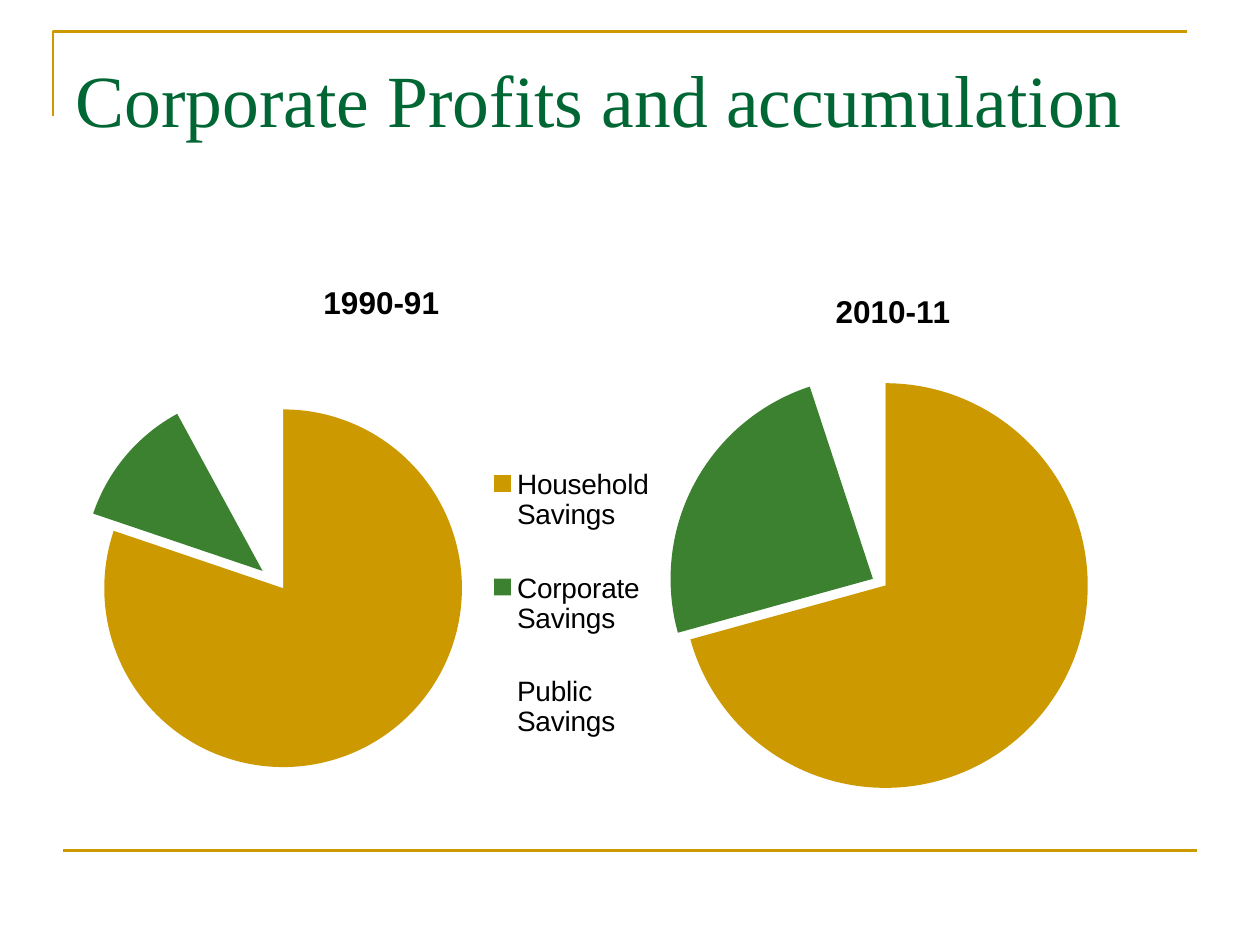
from lxml import etree
from pptx import Presentation
from pptx.chart import data
from pptx.dml import color
from pptx.enum import chart, shapes, text
from pptx.oxml import ns
from pptx.util import Inches, Pt

theme = {
    "gold": color.RGBColor.from_string("CC9900"),
    "green": color.RGBColor.from_string("3B812F"),
    "white": color.RGBColor.from_string("FFFFFF"),
    "black": color.RGBColor.from_string("000000"),
    "dark": color.RGBColor.from_string("006633"),
    "serif": "Times New Roman",
    "sans": "Arial",
    "title": Pt(42), "chart_title": Pt(18), "legend": Pt(16), "base": Pt(10),
    "rule": Pt(1.5),
}

prs = Presentation()
prs.slide_width, prs.slide_height = Inches(10), Inches(7.5)
W, H = prs.slide_width, prs.slide_height
slide = prs.slides.add_slide(prs.slide_layouts[6])


def set_format(obj, **values):
    for name, value in values.items():
        if name == "rgb":
            obj.color.rgb = value
        else:
            setattr(obj, name, value)


def set_layout(el, before, inner=False, **shares):
    for old in el.findall(ns.qn("c:layout")):
        el.remove(old)
    layout = etree.Element(ns.qn("c:layout"))
    manual = etree.SubElement(layout, ns.qn("c:manualLayout"))
    settings = [("layoutTarget", "inner")] if inner else []
    settings += [("xMode", "edge"), ("yMode", "edge"), *shares.items()]
    for tag, value in settings:
        etree.SubElement(manual, ns.qn("c:" + tag)).set("val", str(value))
    el.find(ns.qn("c:" + before)).addprevious(layout)


fb = slide.shapes.build_freeform(int(W * 0.042), int(H * 0.123))
fb.add_line_segments([(int(W * 0.042), int(H * 0.033)), (int(W * 0.942), int(H * 0.033))], close=False)
corner = fb.convert_to_shape()
corner.shadow.inherit = False
corner.fill.background()
rule = slide.shapes.add_connector(
    shapes.MSO_CONNECTOR.STRAIGHT, int(W * 0.05), int(H * 0.9), int(W * 0.95), int(H * 0.9))
etree.SubElement(rule._element.spPr, ns.qn("a:effectLst"))
for sp in (corner, rule):
    set_format(sp.line, rgb=theme["gold"], width=theme["rule"])

sp = slide.shapes.add_textbox(int(W * 0.05), int(H * 0.04), int(W * 0.9), int(H * 0.17))
tf = sp.text_frame
set_format(tf, word_wrap=True, margin_top=Inches(0.13), vertical_anchor=text.MSO_ANCHOR.TOP)
r = tf.paragraphs[0].add_run()
r.text = "Corporate Profits and accumulation"
set_format(r.font, name=theme["serif"], size=theme["title"], rgb=theme["dark"])

pies = [
    {"name": "1990-91", "cats": ["Household Savings", "Corporate Savings", "Public Savings"],
     "vals": [81, 12, 8], "box": (0.069, 0.267, 0.458, 0.635), "legend": True, "explosion": 15,
     "title": {"x": 0.4, "y": 0.04}, "plot": {"x": 0.03, "y": 0.26, "w": 0.62, "h": 0.6}},
    {"name": "2010-11", "cats": ["1", "2", "3"],
     "vals": [70, 24, 5], "box": (0.528, 0.277, 0.353, 0.612), "legend": False, "explosion": 7,
     "title": {"x": 0.37, "y": 0.04}, "plot": {"x": 0.04, "y": 0.21, "w": 0.91, "h": 0.7}},
]
for pie in pies:
    cd = data.CategoryChartData()
    cd.categories = pie["cats"]
    cd.add_series(pie["name"], pie["vals"])
    x, y, w, h = pie["box"]
    ch = slide.shapes.add_chart(
        chart.XL_CHART_TYPE.PIE, int(W * x), int(H * y), int(W * w), int(H * h), cd).chart
    set_format(ch.font, name=theme["sans"], size=theme["base"], rgb=theme["black"])
    set_format(ch, has_title=True, has_legend=pie["legend"])
    p = ch.chart_title.text_frame.paragraphs[0]
    r = p.add_run()
    r.text = pie["name"]
    set_format(r.font, name=theme["sans"], size=theme["chart_title"], bold=True, rgb=theme["black"])
    set_layout(ch.chart_title._element, "overlay", **pie["title"])

    plot = ch.plots[0]
    plot.vary_by_categories = True
    set_layout(ch._chartSpace.chart.plotArea, "pieChart", inner=True, **pie["plot"])
    for i, name in enumerate(("gold", "green", "white")):
        point = plot.series[0].points[i]
        point.format.fill.solid()
        point.format.fill.fore_color.rgb = theme[name]
        point.format.line.fill.background()
    dpt = plot.series[0]._element.findall(ns.qn("c:dPt"))[1]
    explosion = etree.Element(ns.qn("c:explosion"))
    explosion.set("val", str(pie["explosion"]))
    dpt.find(ns.qn("c:spPr")).addprevious(explosion)

    if pie["legend"]:
        set_format(ch.legend, position=chart.XL_LEGEND_POSITION.RIGHT, include_in_layout=False)
        set_format(ch.legend.font, name=theme["sans"], size=theme["legend"], rgb=theme["black"])
        set_layout(ch.legend._element, "overlay", x=0.69, y=0.29, w=0.3, h=0.59)

prs.save("out.pptx")
